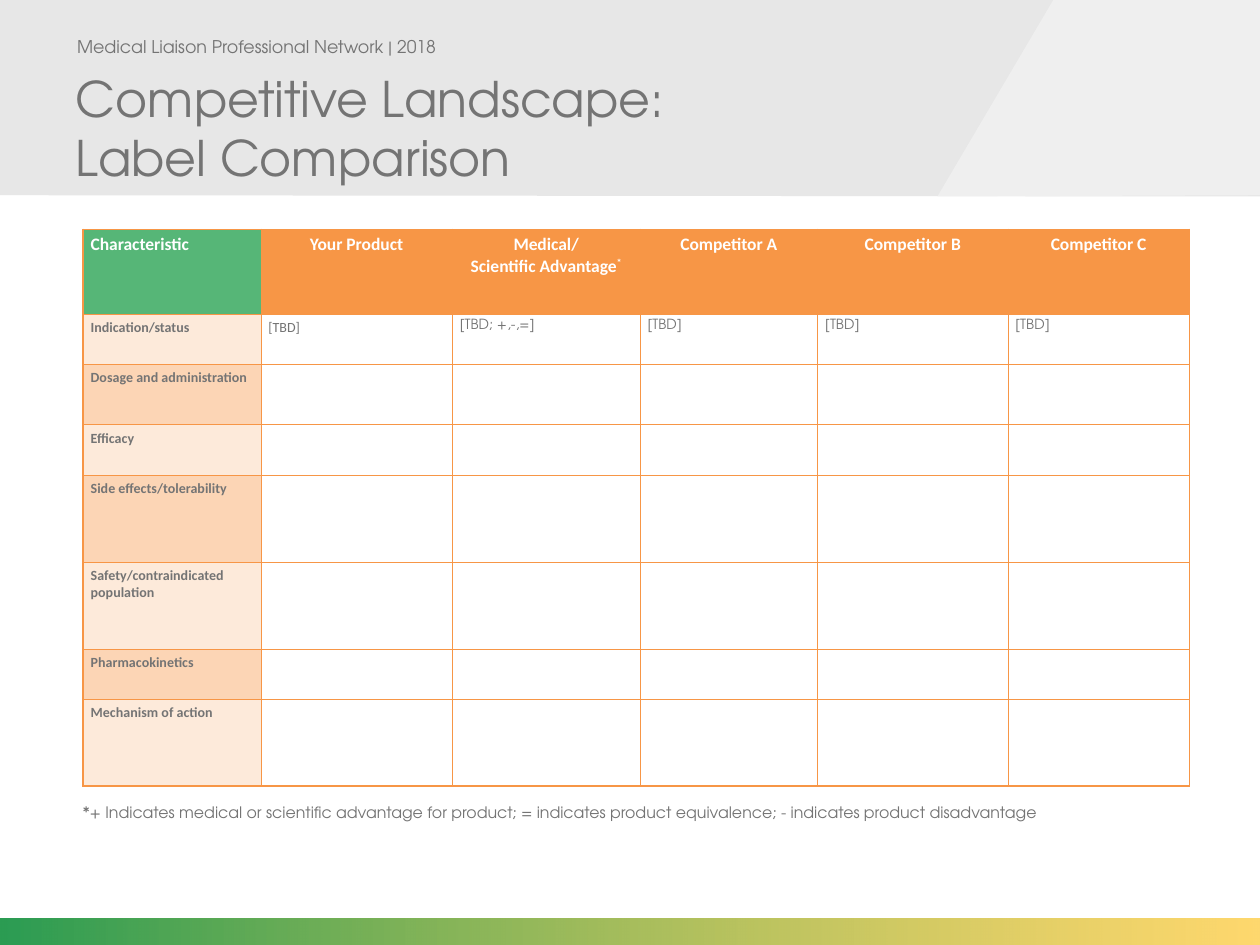
import copy

import pptx
import pptx.dml.color
import pptx.enum.shapes
import pptx.enum.text
import pptx.oxml
import pptx.oxml.ns
import pptx.util
from pptx.util import Inches

COLORS = {
    "banner": "D9D9D9", "banner_light": "F2F2F2",
    "green": "13913F", "yellow": "FEBE0D",
    "text": "747474", "white": "FFFFFF",
    "orange": "F79646", "head_green": "56B677",
    "tint_light": "FDEADA", "tint_dark": "FCD5B5",
}
BRAND_FONT = "TeX Gyre Adventor"
TABLE_FONT = "Calibri"
ALIGN = pptx.enum.text.PP_ALIGN
ANCHOR = pptx.enum.text.MSO_ANCHOR

COL_WIDTHS = [1.41, 1.52, 1.49, 1.41, 1.51, 1.44]
ROW_HEIGHTS = [0.67, 0.4, 0.48, 0.4, 0.69, 0.69, 0.4, 0.69]
HEADINGS = ["Characteristic", "Your Product", "Medical/\nScientific Advantage",
            "Competitor A", "Competitor B", "Competitor C"]
CHARACTERISTICS = ["Indication/status", "Dosage and administration", "Efficacy",
                   "Side effects/tolerability", "Safety/contraindicated population",
                   "Pharmacokinetics", "Mechanism of action"]
STATUS = ["[TBD]", "[TBD; +,-,=]", "[TBD]", "[TBD]", "[TBD]"]


def rgb(name):
    return pptx.dml.color.RGBColor.from_string(COLORS[name])


def format_run(r, size, font, color, bold):
    r.font.size = pptx.util.Pt(size)
    r.font.name = font
    r.font.bold = bold
    r.font.color.rgb = rgb(color)


def write(tf, text, size=10, font=BRAND_FONT, color="text", bold=False,
          align=ALIGN.LEFT, superscript=""):
    """Fill a text frame: \\n starts a paragraph, \\v breaks a line."""
    for i, line in enumerate(text.split("\n")):
        p = tf.add_paragraph() if i else tf.paragraphs[0]
        p.text = line
        p.alignment = align
        for r in p.runs:
            format_run(r, size, font, color, bold)
        for br in p._p.findall(pptx.oxml.ns.qn("a:br")):
            br.insert(0, copy.deepcopy(p.runs[0]._r.rPr))
    if superscript:
        r = p.add_run()
        r.text = superscript
        format_run(r, size, font, color, bold)
        r._r.get_or_add_rPr().set("baseline", "30000")


def set_opacity(sp, *percents):
    """Give the fill colours of a shape, in order, their opacity."""
    colors = sp._element.spPr.iter(pptx.oxml.ns.qn("a:srgbClr"))
    for color, percent in zip(colors, percents):
        alpha = color.makeelement(pptx.oxml.ns.qn("a:alpha"), {"val": str(percent * 1000)})
        color.append(alpha)


def add_polygon(s, points, color, opacity):
    corners = [(Inches(x), Inches(y)) for x, y in points]
    builder = s.shapes.build_freeform(*corners[0])
    builder.add_line_segments(corners[1:], close=True)
    sp = builder.convert_to_shape()
    sp.shadow.inherit = False
    sp.fill.solid()
    sp.fill.fore_color.rgb = rgb(color)
    sp.line.fill.background()
    set_opacity(sp, opacity)


def add_gradient_bar(s):
    sp = s.shapes.add_shape(pptx.enum.shapes.MSO_SHAPE.RECTANGLE,
                            Inches(0), Inches(7.29), Inches(10), Inches(0.21))
    sp.shadow.inherit = False
    sp.line.fill.background()
    sp.fill.gradient()
    sp.fill.gradient_angle = 0
    for stop, position, color in zip(sp.fill.gradient_stops, (0, 1), ("green", "yellow")):
        stop.position = position
        stop.color.rgb = rgb(color)
    set_opacity(sp, 90, 60)


def add_text(s, box, text, anchor=ANCHOR.TOP, **style):
    tf = s.shapes.add_textbox(*map(Inches, box)).text_frame
    tf.word_wrap = False
    tf.vertical_anchor = anchor
    write(tf, text, **style)


def set_title(s, text):
    title = s.shapes.title
    s.shapes._spTree.append(title._element)  # in front of the banner
    title.left, title.top, title.width, title.height = map(Inches, (0.5, 0, 7.5, 1.53))
    tf = title.text_frame
    tf.auto_size = pptx.enum.text.MSO_AUTO_SIZE.NONE
    tf.vertical_anchor = ANCHOR.BOTTOM
    write(tf, text, size=28)


def set_borders(cell, widths):
    """Draw the left, right, top and bottom borders, widths in points."""
    tcPr = cell._tc.get_or_add_tcPr()
    for i, (side, width) in enumerate(zip("LRTB", widths)):
        tcPr.insert(i, pptx.oxml.parse_xml(
            f'<a:ln{side} {pptx.oxml.ns.nsdecls("a")} w="{pptx.util.Pt(width)}">'
            f'<a:solidFill><a:srgbClr val="{COLORS["orange"]}"/></a:solidFill></a:ln{side}>'))


def cell_fill(row, col):
    if row == 0:
        return "orange" if col else "head_green"
    if col == 0:
        return "tint_light" if row % 2 else "tint_dark"
    return None


def write_cell(cell, row, col):
    tf = cell.text_frame
    if row == 0:
        write(tf, HEADINGS[col], font=TABLE_FONT, color="white", bold=True,
              align=ALIGN.CENTER if col else ALIGN.LEFT,
              superscript="*" if col == 2 else "")
    elif col == 0:
        write(tf, CHARACTERISTICS[row - 1], size=8, font=TABLE_FONT, bold=True)
    elif row == 1:
        write(tf, STATUS[col - 1], size=8, font=TABLE_FONT if col == 1 else BRAND_FONT)


def add_comparison_table(s):
    rows, cols = len(ROW_HEIGHTS), len(COL_WIDTHS)
    table = s.shapes.add_table(rows, cols, Inches(0.66), Inches(1.82),
                               Inches(sum(COL_WIDTHS)), Inches(sum(ROW_HEIGHTS))).table
    table.first_row = table.horz_banding = False
    for column, width in zip(table.columns, COL_WIDTHS):
        column.width = Inches(width)
    for row, height in enumerate(ROW_HEIGHTS):
        table.rows[row].height = Inches(height)
        for col in range(cols):
            cell = table.cell(row, col)
            cell.margin_left = cell.margin_right = Inches(0.06)
            cell.margin_top = cell.margin_bottom = Inches(0.04)
            fill = cell_fill(row, col)
            if fill:
                cell.fill.solid()
                cell.fill.fore_color.rgb = rgb(fill)
            else:
                cell.fill.background()
            outer = (col == 0, col == cols - 1, row == 0, row == rows - 1)
            set_borders(cell, [1 if edge else 0.25 for edge in outer])
            write_cell(cell, row, col)


def main():
    prs = pptx.Presentation()
    prs.slide_width, prs.slide_height = Inches(10), Inches(7.5)
    s = prs.slides.add_slide(prs.slide_layouts[5])
    add_polygon(s, [(0, 0), (10, 0), (10, 1.56), (0, 1.55)], "banner", 62)
    add_polygon(s, [(8.36, 0), (10, 0), (10, 1.55), (7.44, 1.56)], "banner_light", 79)
    add_gradient_bar(s)
    add_text(s, (0.48, 0.17, 3.11, 0.4), "Medical Liaison Professional Network | 2018",
             anchor=ANCHOR.MIDDLE, align=ALIGN.CENTER)
    set_title(s, "Competitive Landscape:\vLabel Comparison")
    add_comparison_table(s)
    add_text(s, (0.56, 6.32, 7.88, 0.25),
             "*+ Indicates medical or scientific advantage for product; "
             "= indicates product equivalence; - indicates product disadvantage", size=9)
    prs.save("out.pptx")


if __name__ == "__main__":
    main()
